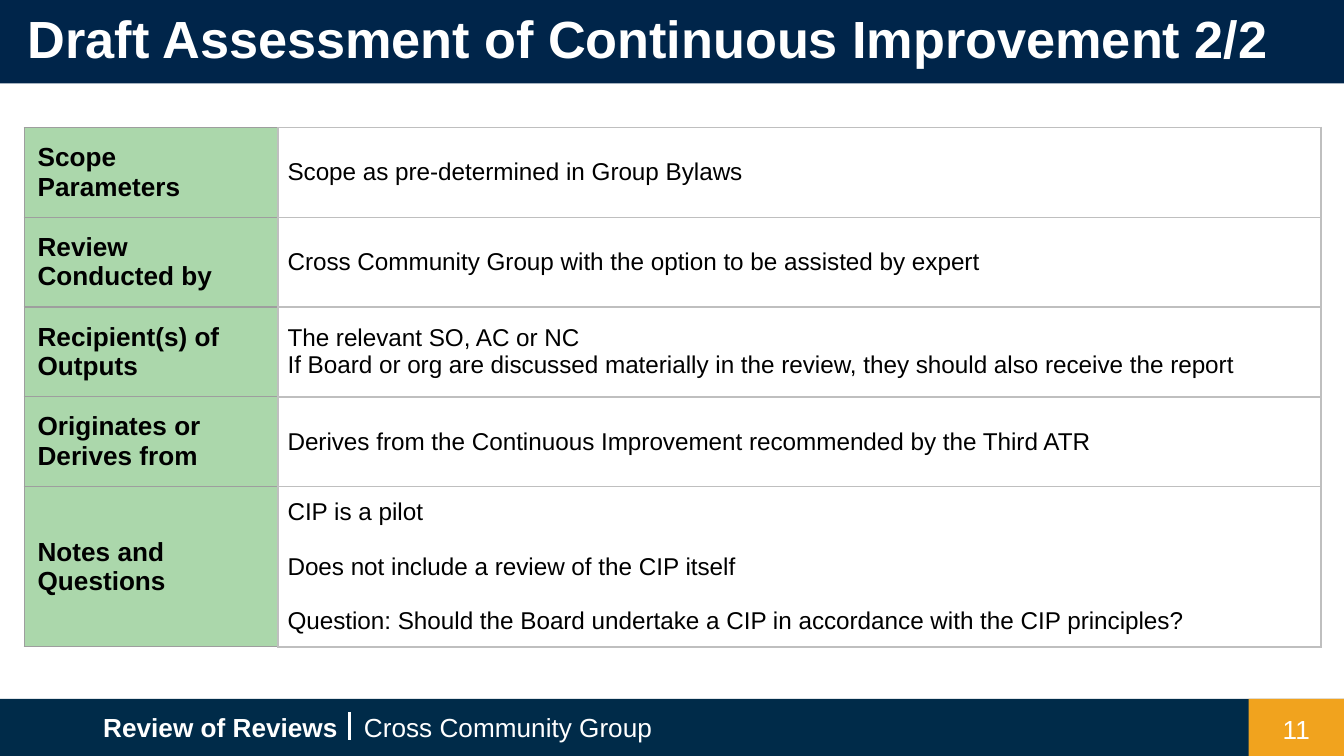
from lxml.etree import SubElement
from pptx import Presentation
from pptx.dml.color import RGBColor
from pptx.enum.shapes import MSO_CONNECTOR, MSO_SHAPE
from pptx.enum.text import MSO_ANCHOR, PP_ALIGN
from pptx.oxml.ns import qn
from pptx.util import Inches, Pt

TITLE = "Draft Assessment of Continuous Improvement 2/2"
ROWS = [
    ("Scope Parameters", ["Scope as pre-determined in Group Bylaws"]),
    ("Review Conducted by", ["Cross Community Group with the option to be assisted by expert"]),
    ("Recipient(s) of Outputs", [
        "The relevant SO, AC or NC",
        "If Board or org are discussed materially in the review, they should also receive the report",
    ]),
    ("Originates or Derives from", ["Derives from the Continuous Improvement recommended by the Third ATR"]),
    ("Notes and Questions", [
        "CIP is a pilot",
        "Does not include a review of the CIP itself",
        "Question: Should the Board undertake a CIP in accordance with the CIP principles?",
    ]),
]
BARS = [
    ((0, 5.2, 10, 0.43), "footer"),
    ((9.29, 5.2, 0.71, 0.43), "accent"),
    ((0, 0, 10, 0.62), "header"),
]
LABELS = [
    ((0.67, 5.19, 2, 0.44), "Review of Reviews", {"bold": True}),
    ((2.61, 5.19, 2.51, 0.44), "Cross Community Group", {}),
    ((9.29, 5.21, 0.71, 0.43), "11", {"align": PP_ALIGN.CENTER}),
    ((0.11, 0, 9.83, 0.6), TITLE,
     {"bold": True, "size": "title", "inset": 0.05, "anchor": MSO_ANCHOR.TOP}),
]
COLUMN_WIDTHS = [1.89, 7.76]
ROW_HEIGHTS = [0.59] + [0.55] * 4
THEME = {
    "font": "Arial",
    "sizes": {"title": 28, "label": 14, "body": 13},
    "colors": {
        "footer": "002B49", "accent": "F1A31E", "header": "00254A", "white": "FFFFFF",
        "black": "000000", "green": "ABD7AB", "dark_rule": "9E9E9E", "light_rule": "BFBFBF",
    },
}


def color(name):
    return RGBColor.from_string(THEME["colors"][name])


def write_text(frame, lines, *, size="label", ink="white", bold=False, align=PP_ALIGN.LEFT, gap=0):
    frame.word_wrap = True
    for index, line in enumerate(lines):
        paragraph = frame.paragraphs[0] if index == 0 else frame.add_paragraph()
        paragraph.text = line
        paragraph.alignment = align
        paragraph.space_before = Pt(gap if index else 0)
        font = paragraph.font
        font.name = THEME["font"]
        font.size = Pt(THEME["sizes"][size])
        font.bold = bold
        font.color.rgb = color(ink)


def set_margins(target, horizontal, vertical):
    target.margin_left = target.margin_right = Inches(horizontal)
    target.margin_top = target.margin_bottom = Inches(vertical)


def add_bar(slide, box, fill):
    shape = slide.shapes.add_shape(MSO_SHAPE.RECTANGLE, *map(Inches, box))
    shape.shadow.inherit = False
    shape.fill.solid()
    shape.fill.fore_color.rgb = color(fill)
    shape.line.fill.background()


def add_label(slide, box, text, inset=0.1, anchor=MSO_ANCHOR.MIDDLE, **text_format):
    frame = slide.shapes.add_textbox(*map(Inches, box)).text_frame
    set_margins(frame, 0.1, inset)
    frame.vertical_anchor = anchor
    write_text(frame, [text], **text_format)


def add_divider(slide):
    connector = slide.shapes.add_connector(
        MSO_CONNECTOR.STRAIGHT, Inches(2.6), Inches(5.3), Inches(2.6), Inches(5.51))
    connector.line.color.rgb = color("white")
    connector.line.width = Pt(1.5)
    SubElement(connector.element.spPr, qn("a:effectLst"))


def style_cell(cell, fill, borders, inset):
    set_margins(cell, inset, inset)
    cell.vertical_anchor = MSO_ANCHOR.MIDDLE
    properties = cell._tc.get_or_add_tcPr()
    for side, (name, width) in borders.items():
        line = SubElement(properties, qn(f"a:ln{side}"), w=str(Pt(width)))
        solid = SubElement(line, qn("a:solidFill"))
        SubElement(solid, qn("a:srgbClr"), val=THEME["colors"][name])
    cell.fill.solid()
    cell.fill.fore_color.rgb = color(fill)


def add_review_table(slide):
    table = slide.shapes.add_table(
        len(ROWS), 2, Inches(0.18), Inches(0.95),
        Inches(sum(COLUMN_WIDTHS)), Inches(sum(ROW_HEIGHTS))).table
    table.first_row = table.horz_banding = False
    for column, width in zip(table.columns, COLUMN_WIDTHS):
        column.width = Inches(width)
    dark, light = ("dark_rule", 0.75), ("light_rule", 1)
    heading_borders = {"L": dark, "R": light, "T": dark, "B": dark}
    detail_borders = dict.fromkeys("LRTB", light)
    for index, (heading, details) in enumerate(ROWS):
        table.rows[index].height = Inches(ROW_HEIGHTS[index])
        heading_cell, detail_cell = table.cell(index, 0), table.cell(index, 1)
        style_cell(heading_cell, "green", heading_borders, 0.1)
        write_text(heading_cell.text_frame, [heading], ink="black", bold=True)
        style_cell(detail_cell, "white", detail_borders, 0.07)
        gap = 14.5 if len(details) > 2 else 0
        write_text(detail_cell.text_frame, details, size="body", ink="black", gap=gap)


def main():
    presentation = Presentation()
    presentation.slide_width = Inches(10)
    presentation.slide_height = presentation.slide_width * 9 // 16
    slide = presentation.slides.add_slide(presentation.slide_layouts[6])
    for box, fill in BARS:
        add_bar(slide, box, fill)
    for box, text, text_format in LABELS:
        add_label(slide, box, text, **text_format)
    add_divider(slide)
    add_review_table(slide)
    presentation.save("out.pptx")


if __name__ == "__main__":
    main()
